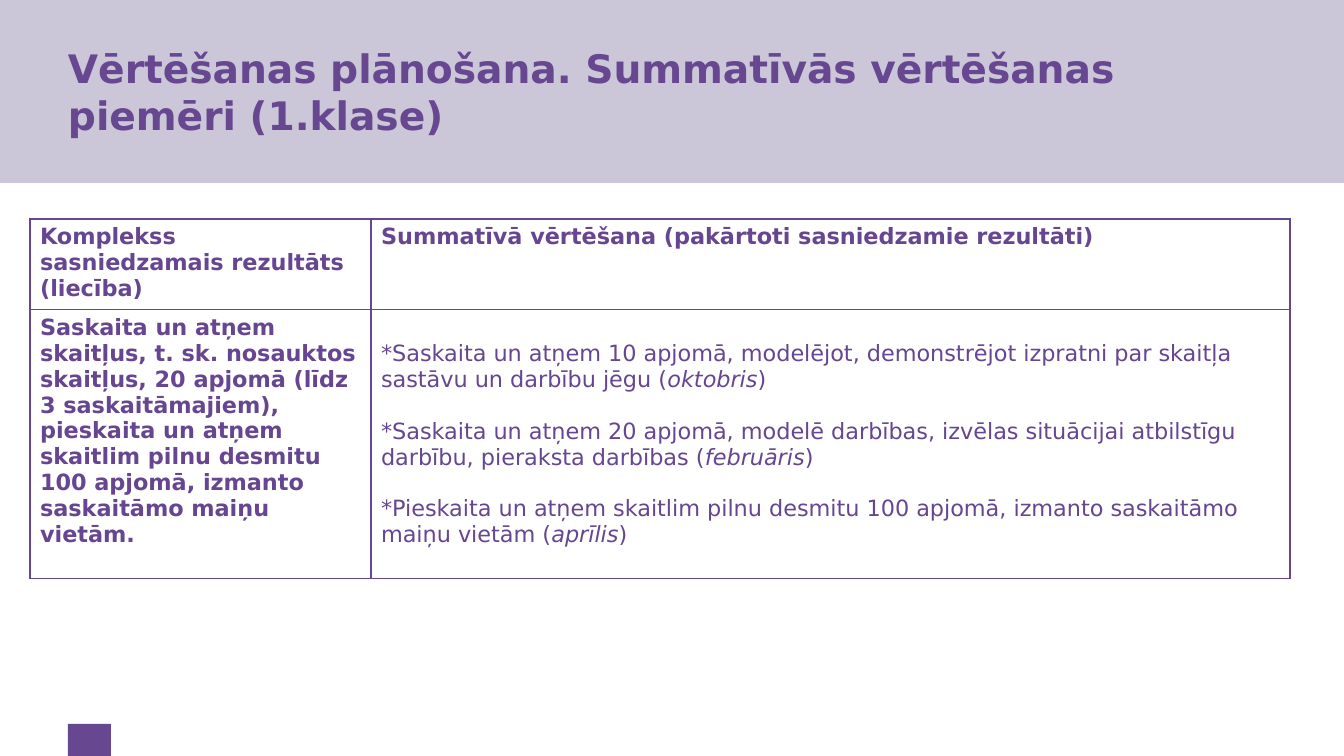
from dataclasses import dataclass

from lxml.etree import SubElement
from pptx import Presentation
from pptx.dml.color import RGBColor
from pptx.enum.shapes import MSO_SHAPE as Preset
from pptx.enum.text import MSO_ANCHOR as Anchor
from pptx.oxml.ns import qn
from pptx.util import Emu, Pt

SLIDE_WIDTH, SLIDE_HEIGHT = 1344, 756
EMU_PER_PX = 12192000 / SLIDE_WIDTH
FONT = "DejaVu Sans"
TITLE_COLOR = "664790"
TABLE_COLOR = "664690"
COLUMN_WIDTHS = (341, 919)
ROW_HEIGHTS = (88, 269)
BLANK_LINE = 18.6


@dataclass(frozen=True)
class Box:
    left: int
    top: int
    width: int
    height: int


@dataclass(frozen=True)
class Bar:
    box: Box
    color: str


@dataclass(frozen=True)
class Assessment:
    skill: str
    month: str


BARS = (
    Bar(Box(0, 0, SLIDE_WIDTH, 183), "CBC7D8"),
    Bar(Box(68, 724, 43, 32), TITLE_COLOR),
)
TITLE = "Vērtēšanas plānošana. Summatīvās vērtēšanas piemēri (1.klase)"
HEADINGS = (
    "Komplekss sasniedzamais rezultāts (liecība)",
    "Summatīvā vērtēšana (pakārtoti sasniedzamie rezultāti)",
)
OUTCOME = (
    "Saskaita un atņem skaitļus, t. sk. nosauktos skaitļus, 20 apjomā "
    "(līdz 3 saskaitāmajiem), pieskaita un atņem skaitlim pilnu desmitu "
    "100 apjomā, izmanto saskaitāmo maiņu vietām."
)
ASSESSMENTS = (
    Assessment(
        "Saskaita un atņem 10 apjomā, modelējot, demonstrējot izpratni "
        "par skaitļa sastāvu un darbību jēgu",
        "oktobris",
    ),
    Assessment(
        "Saskaita un atņem 20 apjomā, modelē darbības, izvēlas situācijai "
        "atbilstīgu darbību, pieraksta darbības",
        "februāris",
    ),
    Assessment(
        "Pieskaita un atņem skaitlim pilnu desmitu 100 apjomā, "
        "izmanto saskaitāmo maiņu vietām",
        "aprīlis",
    ),
)


def px(length: int) -> Emu:
    """Turn pixels into EMU."""
    return Emu(round(length * EMU_PER_PX))


def place(box: Box) -> tuple:
    """Give the position and size of a box in EMU."""
    return px(box.left), px(box.top), px(box.width), px(box.height)


def rgb(color: str) -> RGBColor:
    """Turn a hex string into a colour."""
    return RGBColor.from_string(color)


def add_text(paragraph, text: str, *, size: int = 16, color: str = TABLE_COLOR,
             bold: bool = False, italic: bool = False) -> None:
    """Append one formatted run to a paragraph."""
    run = paragraph.add_run()
    run.text = text
    run.font.name = FONT
    run.font.size = Pt(size)
    run.font.bold = bold
    run.font.italic = italic
    run.font.color.rgb = rgb(color)


def add_bar(slide, bar: Bar) -> None:
    """Draw a plain filled rectangle."""
    shape = slide.shapes.add_shape(Preset.RECTANGLE, *place(bar.box))
    shape.shadow.inherit = False
    shape.fill.solid()
    shape.fill.fore_color.rgb = rgb(bar.color)
    shape.line.fill.background()


def add_title(slide) -> None:
    """Write the slide title over the top bar."""
    frame = slide.shapes.add_textbox(*place(Box(68, 28, 1192, 126))).text_frame
    frame.word_wrap = True
    frame.vertical_anchor = Anchor.MIDDLE
    frame.margin_left = 0
    add_text(frame.paragraphs[0], TITLE, size=28, color=TITLE_COLOR, bold=True)


def style_cell(cell) -> None:
    """Give a cell thin borders on all sides and no fill."""
    properties = cell._tc.get_or_add_tcPr()
    for side in ("a:lnL", "a:lnR", "a:lnT", "a:lnB"):
        border = SubElement(properties, qn(side), w=str(Pt(1)))
        fill = SubElement(border, qn("a:solidFill"))
        SubElement(fill, qn("a:srgbClr"), val=TABLE_COLOR)
    cell.fill.background()


def add_assessments(cell) -> None:
    """List the assessments one blank line apart."""
    cell.margin_top = px(31)
    frame = cell.text_frame
    for index, assessment in enumerate(ASSESSMENTS):
        paragraph = frame.add_paragraph() if index else frame.paragraphs[0]
        paragraph.space_before = Pt(BLANK_LINE if index else 0)
        add_text(paragraph, f"*{assessment.skill} (")
        add_text(paragraph, assessment.month, italic=True)
        add_text(paragraph, ")")


def add_assessment_table(slide) -> None:
    """Build the table of outcomes and their assessments."""
    box = Box(30, 219, sum(COLUMN_WIDTHS), sum(ROW_HEIGHTS))
    table = slide.shapes.add_table(
        len(ROW_HEIGHTS), len(COLUMN_WIDTHS), *place(box)).table
    table.first_row = False
    table.horz_banding = False
    for column, width in zip(table.columns, COLUMN_WIDTHS):
        column.width = px(width)
    for row, height in zip(table.rows, ROW_HEIGHTS):
        row.height = px(height)
    for cell in table.iter_cells():
        style_cell(cell)
    for cell, text in zip(table.iter_cells(), (*HEADINGS, OUTCOME)):
        add_text(cell.text_frame.paragraphs[0], text, bold=True)
    add_assessments(table.cell(1, 1))


def main() -> None:
    """Build and save the presentation."""
    presentation = Presentation()
    presentation.slide_width = px(SLIDE_WIDTH)
    presentation.slide_height = px(SLIDE_HEIGHT)
    slide = presentation.slides.add_slide(presentation.slide_layouts[6])
    for bar in BARS:
        add_bar(slide, bar)
    add_title(slide)
    add_assessment_table(slide)
    presentation.save("out.pptx")


if __name__ == "__main__":
    main()
